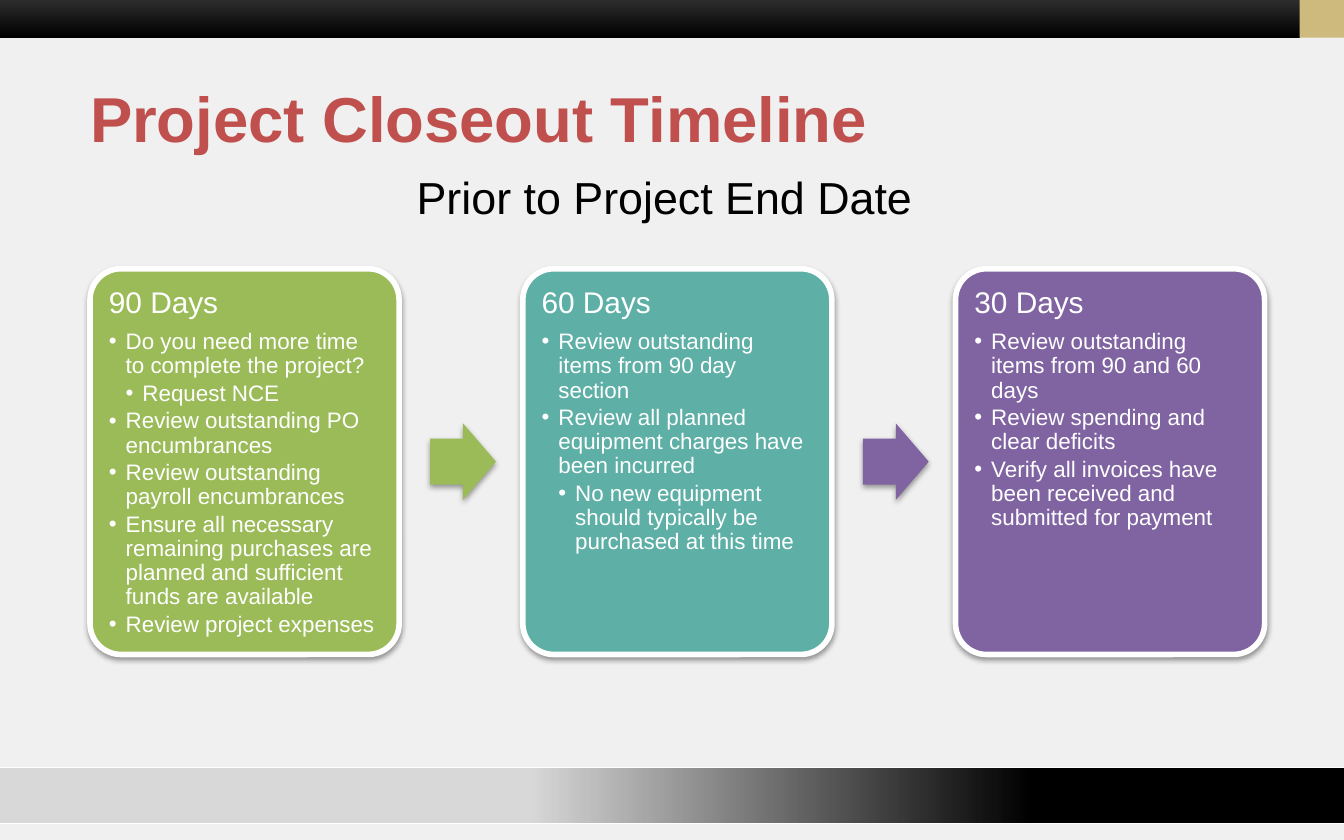
import dataclasses

import pptx
import pptx.dml.color
import pptx.enum.shapes
import pptx.enum.text
import pptx.oxml
import pptx.oxml.ns
import pptx.util

Inches = pptx.util.Inches
Pt = pptx.util.Pt
RGB = pptx.dml.color.RGBColor.from_string
KIND = pptx.enum.shapes.MSO_SHAPE
ANCHOR = pptx.enum.text.MSO_ANCHOR
ALIGN = pptx.enum.text.PP_ALIGN
qn = pptx.oxml.ns.qn


@dataclasses.dataclass
class Theme:
    font: str = "Arial"
    ground: str = "F0F0F0"
    black: str = "000000"
    char: str = "333333"
    white: str = "FFFFFF"
    gold: str = "CFBA7D"
    red: str = "C0504D"
    green: str = "9BBB59"
    teal: str = "5EAFA6"
    purple: str = "8064A2"
    title: int = 34
    lead: int = 24
    head: int = 16
    item: int = 12


def add_node(parent, tag, **values):
    node = pptx.oxml.parse_xml(f"<a:{tag} {pptx.oxml.ns.nsdecls('a')}/>")
    for name, value in values.items():
        node.set(name, str(value))
    parent.append(node)
    return node


class Deck:
    """Holds the theme and the current slide."""

    def __init__(self, show, theme):
        self.theme = theme
        self.slide = show.slides.add_slide(show.slide_layouts[4])
        ground = self.slide.background.fill
        ground.solid()
        ground.fore_color.rgb = RGB(theme.ground)

    def shape(self, kind, box, color=None, edge=None, adjust=()):
        """Add a preset shape; edge is its line width in points."""
        shape = self.slide.shapes.add_shape(kind, *map(Inches, box))
        shape.shadow.inherit = False
        if color:
            shape.fill.solid()
            shape.fill.fore_color.rgb = RGB(color)
        if edge:
            shape.line.color.rgb = RGB(self.theme.white)
            shape.line.width = Pt(edge)
        else:
            shape.line.fill.background()
        for spot, value in enumerate(adjust):
            shape.adjustments[spot] = value
        return shape

    def fade(self, shape, angle, *stops):
        """Fill with two stops, each given as place, colour and opacity."""
        shape.fill.gradient()
        shape.fill.gradient_angle = angle
        for stop, (place, color, _) in zip(shape.fill.gradient_stops, stops):
            stop.position = place
            stop.color.rgb = RGB(color)
        tints = shape.element.spPr.iter(qn("a:srgbClr"))
        for tint, (_, _, alpha) in zip(list(tints), stops):
            add_node(tint, "alpha", val=int(alpha * 100000))

    def shade(self, shape):
        """Cast a soft shadow straight down."""
        effects = shape.element.spPr.find(qn("a:effectLst"))
        outer = add_node(effects, "outerShdw", blurRad=Pt(3.1), dist=Pt(1.6),
                         dir=90 * 60000, rotWithShape=0)
        color = add_node(outer, "srgbClr", val=self.theme.black)
        add_node(color, "alpha", val=38000)

    def holder(self, spot, box, inset, anchor):
        """Move a placeholder to the front and return its text frame."""
        shape = self.slide.placeholders[spot]
        shape.left, shape.top, shape.width, shape.height = map(Inches, box)
        shape.element.getparent().append(shape.element)
        frame = shape.text_frame
        frame.word_wrap = True
        frame.auto_size = pptx.enum.text.MSO_AUTO_SIZE.NONE
        frame.vertical_anchor = anchor
        (frame.margin_left, frame.margin_top,
         frame.margin_right, frame.margin_bottom) = map(Inches, inset)
        return frame

    def put(self, para, text, size, color, bold=False, level=0, after=0, space=1):
        """Fill one paragraph; level 0 is plain, deeper levels have bullets."""
        para.text = text
        para.level = level
        props = para._p.get_or_add_pPr()
        props.set("marL", str(Inches(0.125 * level)))
        props.set("indent", str(Inches(-0.125 if level else 0)))
        if level:
            add_node(props, "buChar", char="•")
        else:
            add_node(props, "buNone")
        para.alignment = ALIGN.LEFT
        para.space_before = Pt(0)
        para.space_after = Pt(after)
        para.line_spacing = space
        for run in para.runs:
            run.font.name = self.theme.font
            run.font.size = Pt(size)
            run.font.bold = bold
            run.font.color.rgb = RGB(color)

    def line(self, spot, box, inset, text, size, color, bold=False):
        frame = self.holder(spot, box, inset, ANCHOR.MIDDLE)
        self.put(frame.paragraphs[0], text, size, color, bold)

    def card(self, spot, box, color, head, items):
        left, top, width, height = box
        self.shade(self.shape(KIND.ROUNDED_RECTANGLE, box, color, 3, [0.1]))
        pad = 0.07
        inner = (left + pad, top + pad, width - 2 * pad, height - 2 * pad)
        frame = self.holder(spot, inner, [pad] * 4, ANCHOR.TOP)
        theme = self.theme
        self.put(frame.paragraphs[0], head, theme.head, theme.white,
                 after=0.35 * theme.head, space=0.9)
        for level, text in items:
            self.put(frame.add_paragraph(), text, theme.item, theme.white,
                     level=level, after=0.15 * theme.item, space=0.9)

    def arrow(self, box, color):
        self.shade(self.shape(KIND.RIGHT_ARROW, box, color, adjust=[0.6, 0.5]))


def main():
    show = pptx.Presentation()
    show.slide_width, show.slide_height = Inches(10), Inches(6.25)
    theme = Theme()
    deck = Deck(show, theme)

    foot = deck.shape(KIND.RECTANGLE, (-0.17, 5.71, 10.33, 0.42), edge=0.75)
    deck.fade(foot, 0, (0.4, theme.black, 0.1), (0.76, theme.black, 1))
    band = deck.shape(KIND.RECTANGLE, (0, -0.04, 9.67, 0.32))
    deck.fade(band, 270, (0, theme.char, 1), (1, theme.black, 1))
    deck.shape(KIND.RECTANGLE, (9.67, -0.04, 0.33, 0.32), theme.gold)

    deck.line(0, (0.67, 0.54, 8.75, 0.67), (0, 0.05, 0.1, 0.05),
              "Project Closeout Timeline", theme.title, theme.red, True)

    steps = [
        ("90 Days", theme.green, [
            (1, "Do you need more time to complete the project?"),
            (2, "Request NCE"),
            (1, "Review outstanding PO encumbrances"),
            (1, "Review outstanding payroll encumbrances"),
            (1, "Ensure all necessary remaining purchases are planned "
                "and sufficient funds are available"),
            (1, "Review project expenses")]),
        ("60 Days", theme.teal, [
            (1, "Review outstanding items from 90 day section"),
            (1, "Review all planned equipment charges have been incurred"),
            (2, "No new equipment should typically be purchased at this time")]),
        ("30 Days", theme.purple, [
            (1, "Review outstanding items from 90 and 60 days"),
            (1, "Review spending and clear deficits"),
            (1, "Verify all invoices have been received and submitted "
                "for payment")]),
    ]
    start, pitch = 0.67, 3.22
    for spot, (head, color, items) in enumerate(steps):
        left = start + spot * pitch
        deck.card(spot + 1, (left, 2, 2.3, 2.87), color, head, items)
    for spot, color in enumerate([theme.green, theme.purple]):
        deck.arrow((start + 2.53 + spot * pitch, 3.15, 0.49, 0.57), color)

    deck.line(4, (3, 1.21, 4.09, 0.5), (0.1, 0.05, 0.1, 0.05),
              "Prior to Project End Date", theme.lead, theme.black)
    show.save("out.pptx")


if __name__ == "__main__":
    main()
